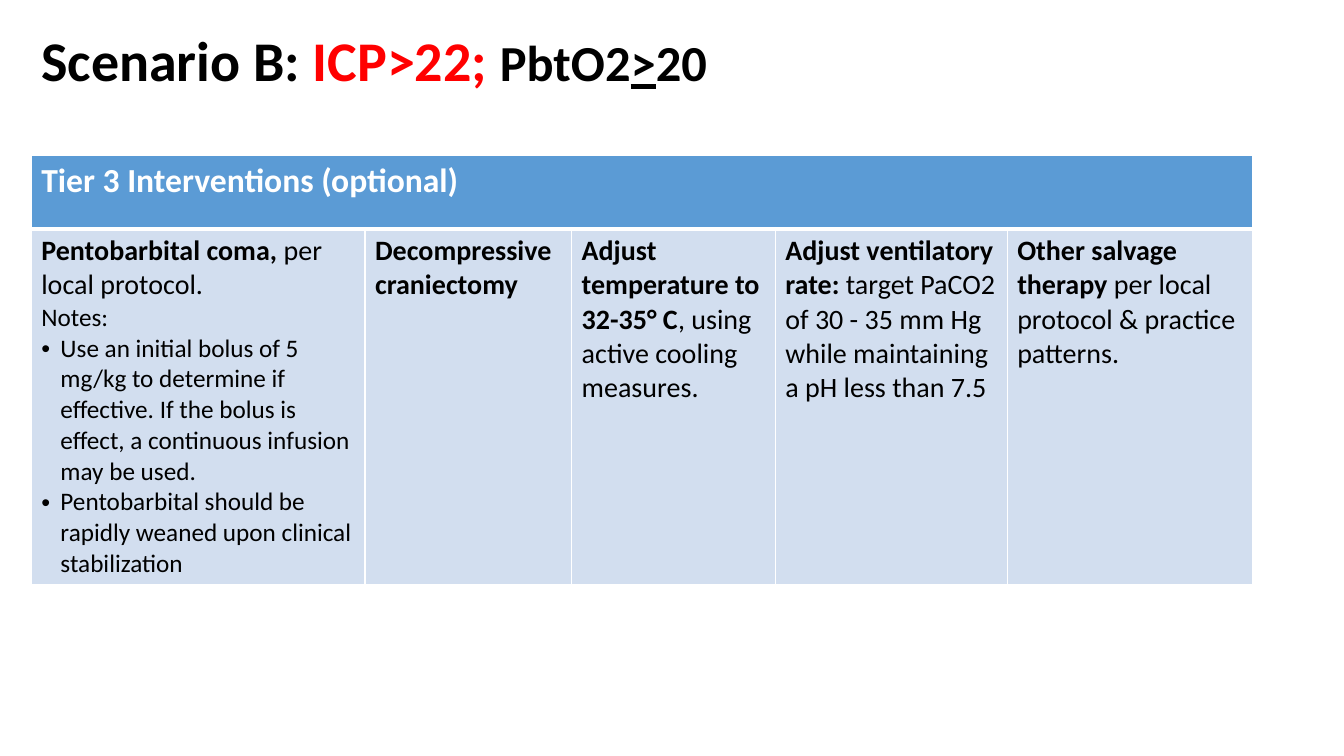
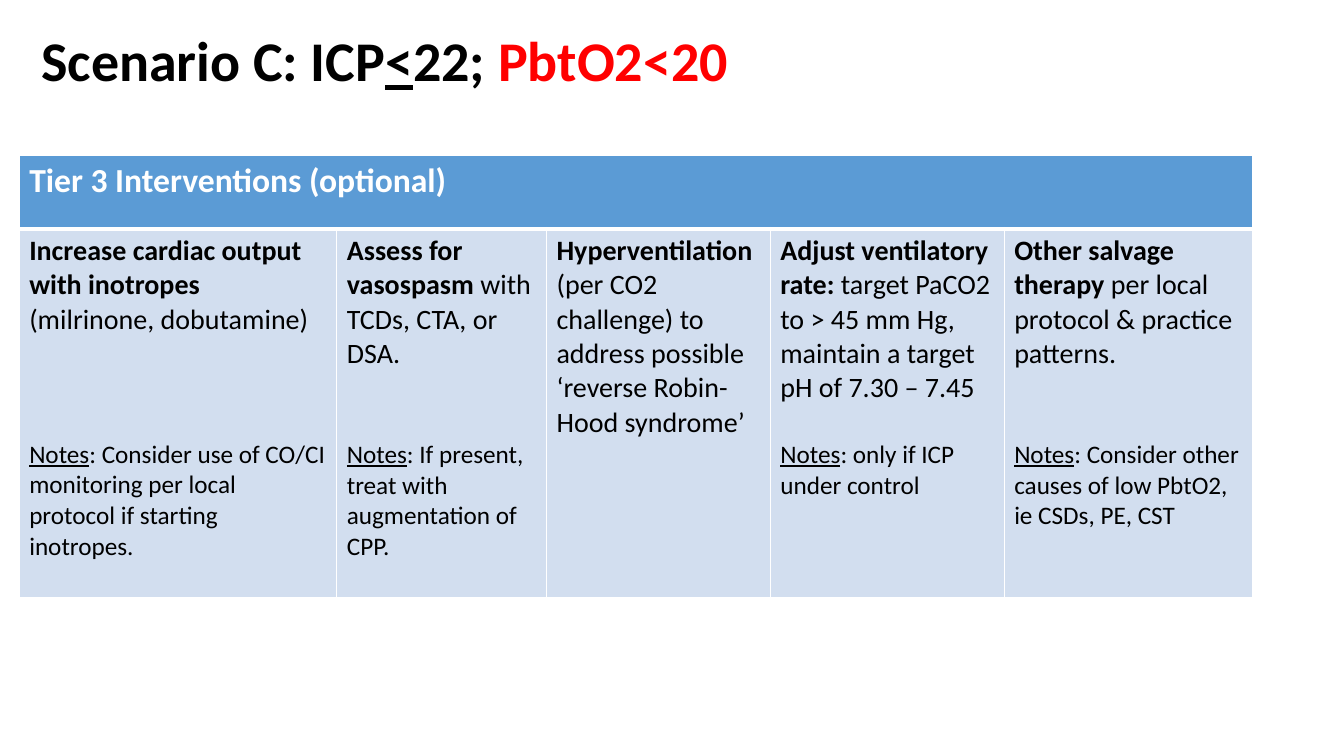
import dataclasses

import lxml.etree
import pptx
import pptx.dml.color
import pptx.enum.text
import pptx.oxml.ns
import pptx.util

EMU_PER_PX = 9144  # 100 px to the inch


@dataclasses.dataclass(frozen=True)
class Theme:
    font: str = "Calibri"
    text: str = "000000"
    alert: str = "FF0000"
    inverse: str = "FFFFFF"
    header_fill: str = "5B9BD5"
    body_fill: str = "D2DEEF"
    border: str = "FFFFFF"
    title_size: float = 40
    header_size: float = 24
    lead_size: float = 20
    note_size: float = 18
    lead_line: float = 24.4  # height of one line of lead text, in points
    thin: float = 1
    thick: float = 3


THEME = Theme()


def px(length):
    return pptx.util.Emu(length * EMU_PER_PX)


def rgb(color):
    return pptx.dml.color.RGBColor.from_string(color)


def add_text(paragraph, text, size=THEME.lead_size, color=THEME.text, bold=False, underline=False):
    run = paragraph.add_run()
    run.text = text
    font = run.font
    font.name = THEME.font
    font.size = pptx.util.Pt(size)
    font.bold = bold
    font.underline = underline
    font.color.rgb = rgb(color)


# Paragraph kinds used in the table cells
@dataclasses.dataclass
class CellParagraph:
    runs: list
    gap_lines: int = 0
    bullet: bool = False


def lead(strong, plain=""):
    parts = [(strong, {"bold": True}), (plain, {})]
    return CellParagraph([part for part in parts if part[0]])


def small(text, bullet=False):
    return CellParagraph([(text, {"size": THEME.note_size})], bullet=bullet)


def notes(text, gap_lines):
    return CellParagraph([("Notes", {"size": THEME.note_size, "underline": True}),
                          (": " + text, {"size": THEME.note_size})], gap_lines)


class Deck:
    """Holds the presentation, its style and the current slide."""

    def __init__(self, theme):
        self.theme = theme
        self.presentation = pptx.Presentation()
        self.presentation.slide_width = px(1333)
        self.presentation.slide_height = px(750)
        self.slide = None

    def new_slide(self):
        layout = self.presentation.slide_layouts.get_by_name("Title Only")
        self.slide = self.presentation.slides.add_slide(layout)

    def title(self, runs):
        shape = self.slide.shapes.title
        shape.left, shape.top, shape.width, shape.height = map(px, (31, 16, 1150, 82))
        frame = shape.text_frame
        frame.word_wrap = True
        frame.auto_size = pptx.enum.text.MSO_AUTO_SIZE.NONE
        frame.vertical_anchor = pptx.enum.text.MSO_ANCHOR.BOTTOM
        paragraph = frame.paragraphs[0]
        paragraph.alignment = pptx.enum.text.PP_ALIGN.LEFT
        paragraph.line_spacing = 0.9
        for text, style in runs:
            add_text(paragraph, text, **{"size": self.theme.title_size, "bold": True, **style})

    def table(self, left, column_widths, body_height, heading, cells):
        row_heights = (73, body_height)
        table = self.slide.shapes.add_table(
            2, len(column_widths), px(left), px(154),
            px(sum(column_widths)), px(sum(row_heights))).table
        table.first_row = table.horz_banding = False
        for column, width in zip(table.columns, column_widths):
            column.width = px(width)
        for row, height in zip(table.rows, row_heights):
            row.height = px(height)

        # Header row, one merged cell
        for cell in table.rows[0].cells:
            self.cell_style(cell, self.theme.header_fill, bottom=self.theme.thick)
        table.cell(0, 0).merge(table.cell(0, len(column_widths) - 1))
        add_text(table.cell(0, 0).text_frame.paragraphs[0], heading, bold=True,
                 size=self.theme.header_size, color=self.theme.inverse)

        # Body row
        for cell, paragraphs in zip(table.rows[1].cells, cells):
            self.cell_style(cell, self.theme.body_fill, top=self.theme.thick)
            self.cell_text(cell, paragraphs)

    def cell_style(self, cell, fill, top=THEME.thin, bottom=THEME.thin):
        properties = cell._tc.get_or_add_tcPr()
        qn = pptx.oxml.ns.qn
        sides = {"L": self.theme.thin, "R": self.theme.thin, "T": top, "B": bottom}
        for side, width in sides.items():
            line = lxml.etree.SubElement(properties, qn("a:ln" + side), w=str(pptx.util.Pt(width)))
            line_fill = lxml.etree.SubElement(line, qn("a:solidFill"))
            lxml.etree.SubElement(line_fill, qn("a:srgbClr"), val=self.theme.border)
        cell.fill.solid()
        cell.fill.fore_color.rgb = rgb(fill)

    def cell_text(self, cell, paragraphs):
        frame = cell.text_frame
        for index, content in enumerate(paragraphs):
            paragraph = frame.add_paragraph() if index else frame.paragraphs[0]
            if content.gap_lines:
                paragraph.space_before = pptx.util.Pt(content.gap_lines * self.theme.lead_line)
            if content.bullet:
                self.bullet(paragraph)
            for text, style in content.runs:
                add_text(paragraph, text, **style)

    def bullet(self, paragraph):
        properties = paragraph._p.get_or_add_pPr()
        properties.set("marL", str(px(19)))
        properties.set("indent", str(px(-19)))
        qn = pptx.oxml.ns.qn
        lxml.etree.SubElement(properties, qn("a:buFont"), typeface="Arial")
        lxml.etree.SubElement(properties, qn("a:buChar"), char="•")


def main():
    deck = Deck(THEME)
    red = {"color": THEME.alert}
    underlined = {"underline": True}
    heading = "Tier 3 Interventions (optional)"
    salvage = lead("Other salvage therapy ", "per local protocol & practice patterns.")

    # Scenario B
    deck.new_slide()
    smaller = {"size": 36}
    deck.title([("Scenario B: ", {}), ("ICP>22; ", red), ("PbtO2", smaller),
                (">", {**smaller, **underlined}), ("20", smaller)])
    deck.table(31, (331, 205, 202, 230, 243), 352, heading, [
        [lead("Pentobarbital coma, ", "per local protocol."),
         small("Notes:"),
         small("Use an initial bolus of 5 mg/kg to determine if effective. "
               "If the bolus is effect, a continuous infusion may be used.", bullet=True),
         small("Pentobarbital should be rapidly weaned upon clinical stabilization", bullet=True)],
        [lead("Decompressive craniectomy")],
        [lead("Adjust temperature to 32-35° C", ", using active cooling measures.")],
        [lead("Adjust ventilatory rate: ",
              "target PaCO2 of 30 - 35 mm Hg while maintaining a pH less than 7.5")],
        [salvage],
    ])

    # Scenario C
    deck.new_slide()
    deck.title([("Scenario C: ICP", {}), ("<", underlined), ("22; ", {}), ("PbtO2<20", red)])
    deck.table(19, (315, 208, 222, 232, 246), 366, heading, [
        [lead("Increase cardiac output with inotropes ", "(milrinone, dobutamine)"),
         notes("Consider use of CO/CI monitoring per local protocol if starting inotropes.", 3)],
        [lead("Assess for vasospasm ", "with TCDs, CTA, or DSA."),
         notes("If present, treat with augmentation of CPP.", 2)],
        [lead("Hyperventilation",
              " (per CO2 challenge) to address possible ‘reverse Robin-Hood syndrome’")],
        [lead("Adjust ventilatory rate: ",
              "target PaCO2 to > 45 mm Hg, maintain a target pH of 7.30 – 7.45"),
         notes("only if ICP under control", 1)],
        [salvage, notes("Consider other causes of low PbtO2, ie CSDs, PE, CST", 2)],
    ])

    deck.presentation.save("out.pptx")


if __name__ == "__main__":
    main()
